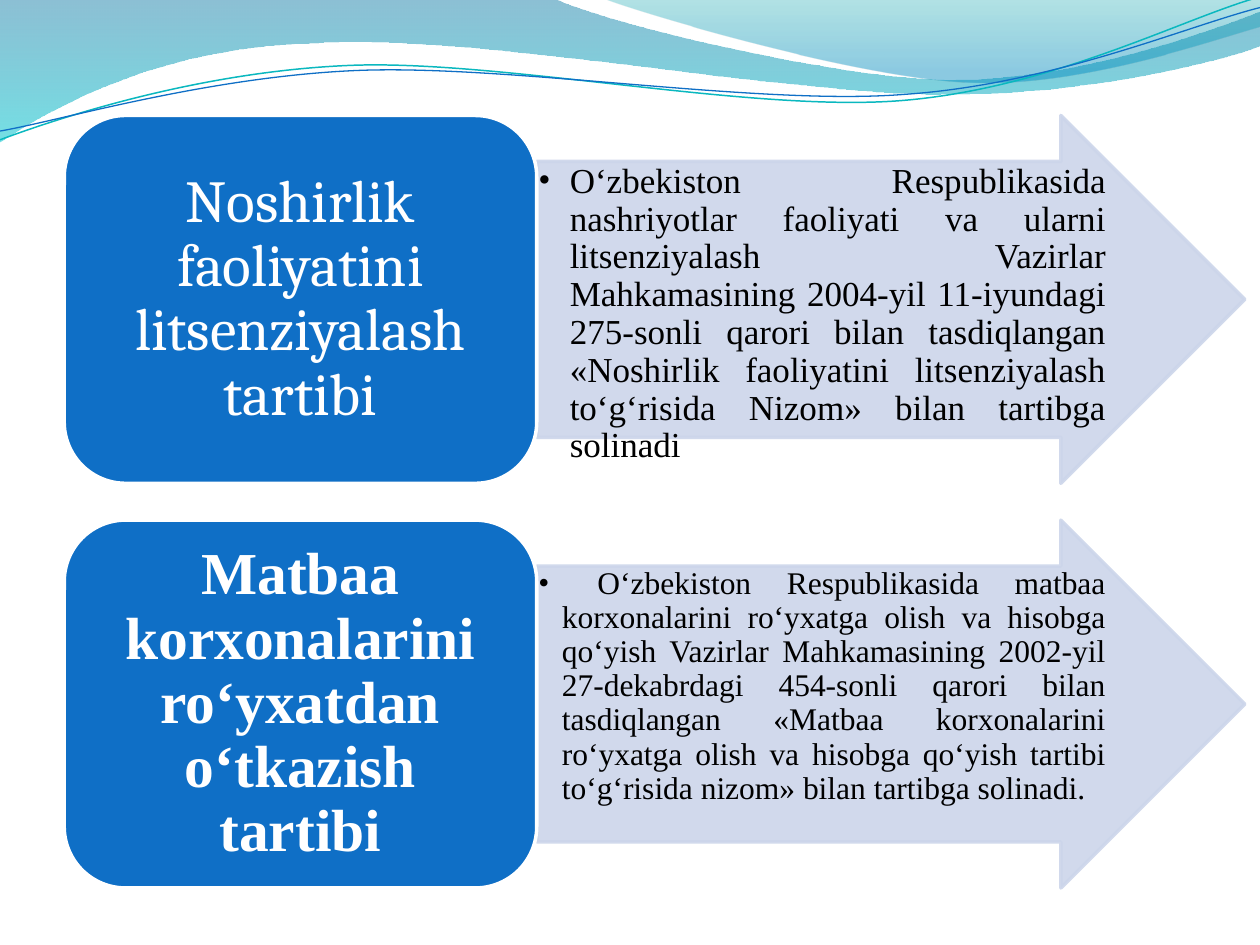
from math import cos, radians, sin

from lxml import etree
from pptx import Presentation
from pptx.dml.color import RGBColor
from pptx.enum.shapes import MSO_SHAPE
from pptx.enum.text import MSO_ANCHOR, PP_ALIGN
from pptx.oxml.ns import qn
from pptx.util import Pt

ARROW, ROUND = MSO_SHAPE.RIGHT_ARROW, MSO_SHAPE.ROUNDED_RECTANGLE
TOP, MIDDLE = MSO_ANCHOR.TOP, MSO_ANCHOR.MIDDLE
CENTER, JUSTIFY = PP_ALIGN.CENTER, PP_ALIGN.JUSTIFY
SERIF, TIMES = "Cambria", "Times New Roman"
TAGS = {2: "a:lnTo", 6: "a:cubicBezTo"}

COLORS = {
    "blue": "0F6FC6", "pale": "CCD5EA", "white": "FFFFFF", "black": "000000",
    "teal": "0AB8BF", "deep": "0074A1", "aqua": "00C6CF",
    "sea": "00A1A9", "sky": "008BBF",
}

WAVES = [
    ((-0.7, -0.7, 721.4, 82.1),
     [(0, 0), (316.8, -0.7),
      (342.7, 12.2, 478.1, 45.4, 545.8, 45.4),
      (614.2, 45.4, 689.8, 18.7, 720, 6.5), (720.7, 25.9),
      (707.8, 31.7, 626.4, 54.7, 537.1, 54),
      (447.8, 54, 275, 20.2, 185, 24.5),
      (92.9, 25.9, 33.1, 59.8, -0.7, 81.4), (0, 0)],
     [(0, "deep", 45), (1, "aqua", 55)]),
    ((344.9, -0.7, 375.1, 50.4),
     [(344.9, -0.7),
      (366.5, 7.9, 491, 44.6, 553.7, 46.8),
      (616.3, 49.7, 691.9, 23, 720, 15.1), (720, 0), (344.9, -0.7)],
     [(0, "sea", 30), (0.8, "sky", 45)]),
]
LINES = [
    ((-1.4, 15.8, 721.4, 51.1),
     [(0, 79.9), (34.6, 67, 113.8, 41, 199.4, 37.4),
      (284.4, 33.8, 427, 64.1, 513.4, 57.6),
      (599.8, 51.1, 675.4, 10.8, 718.6, -1.4)], "teal", 0.85),
    ((-1.4, 21.6, 722.2, 41.8),
     [(0, 74.9), (33.8, 69.1, 118.1, 43.9, 203.8, 40.3),
      (290.2, 36.7, 433.4, 60.5, 516.2, 54),
      (601.9, 48.2, 677.5, 15.1, 720, 4.3)], "blue", 0.75),
]
TILT = 2.7
ROWS = [
    ("Noshirlik faoliyatini litsenziyalash tartibi",
     {"name": SERIF, "size": Pt(34)},
     "O‘zbekiston Respublikasida nashriyotlar faoliyati va ularni "
     "litsenziyalash Vazirlar Mahkamasining 2004-yil 11-iyundagi 275-sonli "
     "qarori bilan tasdiqlangan «Noshirlik faoliyatini litsenziyalash "
     "to‘g‘risida Nizom» bilan tartibga solinadi",
     {"name": TIMES, "size": Pt(20)}, 18),
    ("Matbaa korxonalarini ro‘yxatdan o‘tkazish tartibi",
     {"name": TIMES, "size": Pt(34), "bold": True},
     " O‘zbekiston Respublikasida matbaa korxonalarini ro‘yxatga olish va "
     "hisobga qo‘yish Vazirlar Mahkamasining 2002-yil 27-dekabrdagi 454-sonli "
     "qarori bilan tasdiqlangan «Matbaa korxonalarini ro‘yxatga olish va "
     "hisobga qo‘yish tartibi to‘g‘risida nizom» bilan tartibga solinadi.",
     {"name": TIMES, "size": Pt(18)}, 13.5),
]
LEFT, MID, FIRST, PITCH = 36.7, 306.7, 66, 231.2
BOX_W, ARROW_W, HIGH = 270, 404.6, 210.2
INSET, DROP, TEXT_W = 10.25, 26.3, 326.2


def rgb(key):
    """Return the named colour."""
    return RGBColor.from_string(COLORS[key])


def fade(node, value):
    """Set the opacity in percent of every colour below a node."""
    for color in node.iter(qn("a:srgbClr")):
        etree.SubElement(color, qn("a:alpha"), val=str(value * 1000))


def turn(x, y, box, angle):
    """Turn a point about the centre of a box, relative to its corner."""
    left, top, wide, high = box
    dx, dy = x - left - wide / 2, y - top - high / 2
    c, s = cos(radians(angle)), sin(radians(angle))
    return Pt(dx * c - dy * s + wide / 2), Pt(dx * s + dy * c + high / 2)


def add_curve(slide, box, route, angle=0):
    """Add an outline of lines and Bezier curves, tilted within its box."""
    pen = slide.shapes.build_freeform(*map(Pt, route[0]))
    pen.add_line_segments([tuple(map(Pt, seg[-2:])) for seg in route[1:]],
                          close=False)
    shape = pen.convert_to_shape()
    shape.shadow.inherit = False
    for key, value in zip(("left", "top", "width", "height"), box):
        setattr(shape, key, Pt(value))
    shape.rotation = -angle
    track = next(shape._element.iter(qn("a:path")))
    track.set("w", str(shape.width))
    track.set("h", str(shape.height))
    for node in list(track):
        track.remove(node)
    for i, seg in enumerate(route):
        step = etree.SubElement(track, qn(TAGS[len(seg)] if i else "a:moveTo"))
        for x, y in zip(seg[::2], seg[1::2]):
            x, y = turn(x, y, box, angle)
            etree.SubElement(step, qn("a:pt"), x=str(x), y=str(y))
    return shape, track


def add_wave(slide, box, route, stops):
    """Add a closed wave with a see-through gradient from top to bottom."""
    shape, track = add_curve(slide, box, route[:-1])
    etree.SubElement(track, qn("a:close"))
    shape.line.fill.background()
    shape.fill.gradient()
    shape.fill.gradient_angle = 270
    nodes = shape._element.spPr.iter(qn("a:gs"))
    for stop, node, spot in zip(shape.fill.gradient_stops, nodes, stops):
        stop.position, key, alpha = spot
        stop.color.rgb = rgb(key)
        fade(node, alpha)


def add_line(slide, box, route, color, width):
    """Add an open curved line."""
    shape, _ = add_curve(slide, box, route, TILT)
    shape.fill.background()
    shape.line.color.rgb = rgb(color)
    shape.line.width = Pt(width)


def add_block(slide, kind, box, fill, edge):
    """Add a filled preset shape with a two-point edge."""
    shape = slide.shapes.add_shape(kind, *map(Pt, box))
    shape.shadow.inherit = False
    shape.fill.solid()
    shape.fill.fore_color.rgb = rgb(fill)
    shape.line.color.rgb = rgb(edge)
    shape.line.width = Pt(2)
    return shape


def add_text(slide, box, text, font, color, align, anchor, pads):
    """Add a text box with one formatted paragraph."""
    frame = slide.shapes.add_textbox(*map(Pt, box)).text_frame
    side, edge = map(Pt, pads)
    form = {"word_wrap": True, "vertical_anchor": anchor,
            "margin_left": side, "margin_right": side,
            "margin_top": edge, "margin_bottom": edge}
    for key, value in form.items():
        setattr(frame, key, value)
    para = frame.paragraphs[0]
    para.alignment, para.line_spacing = align, 0.9
    run = para.add_run()
    run.text = text
    for key, value in font.items():
        setattr(run.font, key, value)
    run.font.color.rgb = rgb(color)
    return para


def add_bullet(para, indent):
    """Give a paragraph a hanging round bullet."""
    para.level = 1
    props = para._p.get_or_add_pPr()
    props.set("marL", str(Pt(indent)))
    props.set("indent", str(-Pt(indent)))
    etree.SubElement(props, qn("a:buFont"), typeface=TIMES)
    etree.SubElement(props, qn("a:buChar"), char="•")


def add_row(slide, top, title, head, body, font, indent):
    """Add an arrow with its details and the titled box beside it."""
    arrow = add_block(slide, ARROW, (MID, top, ARROW_W, HIGH), "pale", "pale")
    arrow.adjustments[0] = 0.75
    fade(arrow._element.spPr, 90)
    para = add_text(slide, (MID, top + DROP, TEXT_W, HIGH * 0.75), body, font,
                    "black", JUSTIFY, TOP, (0.9, 0.9))
    add_bullet(para, indent)
    add_block(slide, ROUND, (LEFT, top, BOX_W, HIGH), "blue", "white")
    inner = (LEFT + INSET, top + INSET, BOX_W - 2 * INSET, HIGH - 2 * INSET)
    add_text(slide, inner, title, head, "white", CENTER, MIDDLE, (10.2, 5.1))


def main():
    """Build and save the slide."""
    deck = Presentation()
    deck.slide_width, deck.slide_height = Pt(720), Pt(540)
    slide = deck.slides.add_slide(deck.slide_layouts[6])
    for wave in WAVES:
        add_wave(slide, *wave)
    for line in LINES:
        add_line(slide, *line)
    for i, row in enumerate(ROWS):
        add_row(slide, FIRST + i * PITCH, *row)
    deck.save("out.pptx")


if __name__ == "__main__":
    main()
